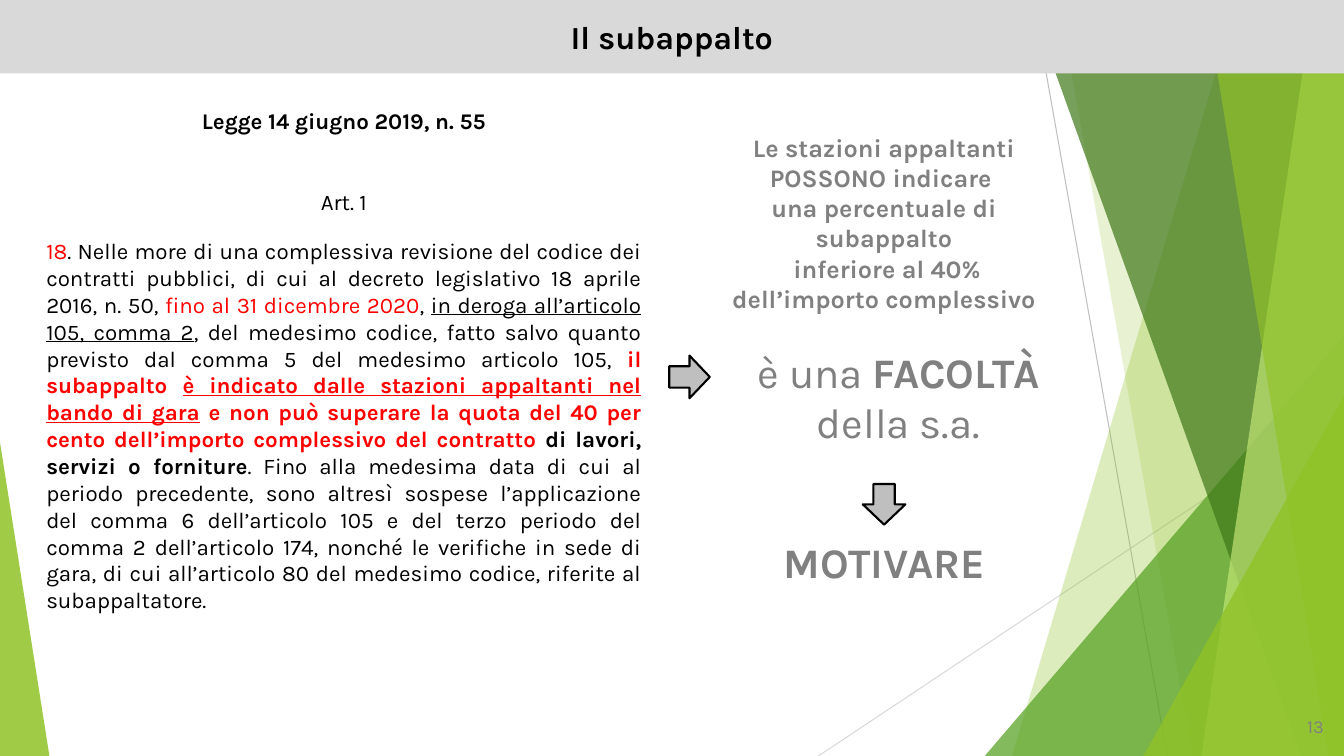
import pptx
import pptx.dml.color
import pptx.enum.shapes
import pptx.enum.text
import pptx.oxml
import pptx.oxml.ns
import pptx.util
from dataclasses import dataclass
from typing import Any

Pt = pptx.util.Pt
Kind = pptx.enum.shapes.MSO_SHAPE
Side = pptx.enum.text.PP_ALIGN
Hold = pptx.enum.text.MSO_ANCHOR
WIDE, HIGH, TOP = 960, 540, -0.6


@dataclass(frozen=True)
class Theme:
    font: str = "Karla"
    ink: str = "000000"
    red: str = "FF0000"
    gray: str = "808080"
    band: str = "D9D9D9"
    steel: str = "BFBFBF"
    lime: str = "90C226"
    pale: str = "C0E474"
    leaf: str = "54A021"
    pine: str = "3F7819"
    page: float = 13
    law: float = 16
    note: float = 18
    title: float = 23
    big: float = 30


LOOK = Theme()


@dataclass(frozen=True)
class Ray:
    """Thin line between two points."""
    start: tuple[float, float]
    end: tuple[float, float]
    color: str


@dataclass(frozen=True)
class Blade:
    """Full-height panel from a slanted edge to the right of the slide."""
    head: float
    foot: float
    color: str
    alpha: int


@dataclass(frozen=True)
class Wedge:
    """Right triangle on the bottom edge; lean 1 peaks right, 0 left."""
    left: float
    top: float
    width: float
    lean: int
    color: str
    alpha: int


@dataclass(frozen=True)
class Arrow:
    left: float
    top: float
    turn: int


@dataclass(frozen=True)
class Bit:
    text: str
    color: str = LOOK.ink
    bold: bool = False
    under: bool = False


@dataclass(frozen=True)
class Para:
    bits: tuple[Bit, ...]
    align: Any = Side.CENTER
    gap: float = 0


@dataclass(frozen=True)
class Block:
    box: tuple[float, float, float, float]
    size: float
    paras: tuple[Para, ...]
    hold: Any = Hold.TOP
    inset: float = 3.6


def tint(name: str) -> pptx.dml.color.RGBColor:
    return pptx.dml.color.RGBColor.from_string(name)


def paint(shape: Any, color: str, alpha: int = 100) -> None:
    shape.shadow.inherit = False
    shape.fill.solid()
    shape.fill.fore_color.rgb = tint(color)
    shape.line.fill.background()
    if alpha < 100:
        node = shape.element.spPr.find(".//" + pptx.oxml.ns.qn("a:srgbClr"))
        fade = pptx.oxml.parse_xml(
            f'<a:alpha {pptx.oxml.ns.nsdecls("a")} val="{alpha * 1000}"/>')
        node.append(fade)


def draw_ray(slide: Any, ray: Ray) -> None:
    ends = [Pt(n) for n in ray.start + ray.end]
    line = slide.shapes.add_connector(
        pptx.enum.shapes.MSO_CONNECTOR.STRAIGHT, *ends)
    line.line.color.rgb = tint(ray.color)
    line.line.width = Pt(0.75)
    line.element.spPr.append(pptx.oxml.parse_xml(
        f'<a:effectLst {pptx.oxml.ns.nsdecls("a")}/>'))


def draw_blade(slide: Any, blade: Blade) -> None:
    form = slide.shapes.build_freeform(Pt(blade.head), Pt(TOP))
    rest = [(WIDE, TOP), (WIDE, HIGH), (blade.foot, HIGH)]
    form.add_line_segments([(Pt(x), Pt(y)) for x, y in rest], close=True)
    paint(form.convert_to_shape(), blade.color, blade.alpha)


def draw_wedge(slide: Any, wedge: Wedge) -> None:
    shape = slide.shapes.add_shape(
        Kind.ISOSCELES_TRIANGLE, Pt(wedge.left), Pt(wedge.top),
        Pt(wedge.width), Pt(HIGH - wedge.top))
    shape.adjustments[0] = wedge.lean
    paint(shape, wedge.color, wedge.alpha)


def draw_arrow(slide: Any, arrow: Arrow) -> None:
    shape = slide.shapes.add_shape(
        Kind.RIGHT_ARROW, Pt(arrow.left), Pt(arrow.top), Pt(29), Pt(30.5))
    paint(shape, LOOK.steel)
    shape.line.color.rgb = tint(LOOK.ink)
    shape.line.width = Pt(1.5)
    shape.rotation = arrow.turn


def draw_block(slide: Any, block: Block) -> None:
    frame = slide.shapes.add_textbox(*[Pt(n) for n in block.box]).text_frame
    frame.word_wrap = True
    frame.vertical_anchor = block.hold
    frame.margin_top = Pt(block.inset)
    for i, para in enumerate(block.paras):
        line = frame.add_paragraph() if i else frame.paragraphs[0]
        line.alignment = para.align
        line.space_before = Pt(para.gap)
        for bit in para.bits:
            run = line.add_run()
            run.text = bit.text
            font = run.font
            font.name, font.size = LOOK.font, Pt(block.size)
            font.bold, font.underline = bit.bold, bit.under
            font.color.rgb = tint(bit.color)


def gray(*lines: str) -> tuple[Para, ...]:
    return tuple(Para((Bit(t, LOOK.gray, True),)) for t in lines)


# Green backdrop, from back to front
SCENE = (
    Ray((738, 0), (833.8, HIGH), LOOK.steel),
    Ray((WIDE, 290.2), (584.6, HIGH), LOOK.band),
    Blade(884.2, 722.9, LOOK.lime, 30),
    Blade(756, 851.8, LOOK.lime, 20),
    Wedge(703.4, 240, 256.6, 1, LOOK.leaf, 72),
    Blade(735, 929.5, LOOK.pine, 70),
    Blade(938.2, 858.2, LOOK.pale, 70),
    Blade(861, 949, LOOK.lime, 65),
    Wedge(816.7, 283, 143.3, 1, LOOK.lime, 80),
    Wedge(0, 316, 35.3, 0, LOOK.lime, 85),
)

ARROWS = (Arrow(478, 254, 0), Arrow(617, 345, 90))

# Text of the law, run by run
LAW = (
    Bit("18", LOOK.red),
    Bit(". Nelle more di una complessiva revisione del codice dei contratti pubblici, di cui al decreto legislativo 18 aprile 2016, n. 50, "),
    Bit("fino al 31 dicembre 2020", LOOK.red),
    Bit(", "),
    Bit("in deroga all’articolo 105, comma 2", under=True),
    Bit(", del medesimo codice, fatto salvo quanto previsto dal comma 5 del medesimo articolo 105, "),
    Bit("il subappalto ", LOOK.red, True),
    Bit("è indicato dalle stazioni appaltanti nel bando di gara", LOOK.red, True, True),
    Bit(" e non può superare la quota del 40 per cento dell’importo complessivo del contratto ", LOOK.red, True),
    Bit("di lavori, servizi o forniture", bold=True),
    Bit(". Fino alla medesima data di cui al periodo precedente, sono altresì sospese l’applicazione del comma 6 dell’articolo 105 e del terzo periodo del comma 2 dell’articolo 174, nonché le verifiche in sede di gara, di cui all’articolo 80 del medesimo codice, riferite al subappaltatore."),
)

BLOCKS = (
    Block((898.6, 504, 54, 28.8), LOOK.page,
          (Para((Bit("13", LOOK.gray),), Side.RIGHT),), Hold.MIDDLE),
    Block((0, 8.6, WIDE, 35.3), LOOK.title,
          (Para((Bit("Il subappalto", bold=True),)),)),
    Block((26, 53.3, 439.2, 391.7), LOOK.law, (
        Para((Bit("Legge 14 giugno 2019, n. 55", bold=True),)),
        Para((Bit("Art. 1"),), gap=39),
        Para(LAW, Side.JUSTIFY, 15.8)), inset=23),
    Block((501.8, 90.7, 259.2, 138.2), LOOK.note, gray(
        "Le stazioni appaltanti POSSONO indicare ",
        "una percentuale di subappalto",
        " inferiore al 40% dell’importo complessivo")),
    Block((498.2, 243.4, 287.3, 80), LOOK.big, (Para((
        Bit("è una ", LOOK.gray),
        Bit("FACOLTÀ ", LOOK.gray, True),
        Bit("della s.a.", LOOK.gray))),), Hold.MIDDLE),
    Block((498.2, 379.4, 267, 44), LOOK.big, gray("MOTIVARE"), Hold.MIDDLE),
)


def main() -> None:
    deck = pptx.Presentation()
    deck.slide_width, deck.slide_height = Pt(WIDE), Pt(HIGH)
    slide = deck.slides.add_slide(deck.slide_layouts[6])
    tools = {Ray: draw_ray, Blade: draw_blade, Wedge: draw_wedge}
    for part in SCENE:
        tools[type(part)](slide, part)
    # Title band
    band = slide.shapes.add_shape(Kind.RECTANGLE, 0, 0, Pt(WIDE), Pt(52.5))
    paint(band, LOOK.band)
    for arrow in ARROWS:
        draw_arrow(slide, arrow)
    for block in BLOCKS:
        draw_block(slide, block)
    deck.save("out.pptx")


if __name__ == "__main__":
    main()
